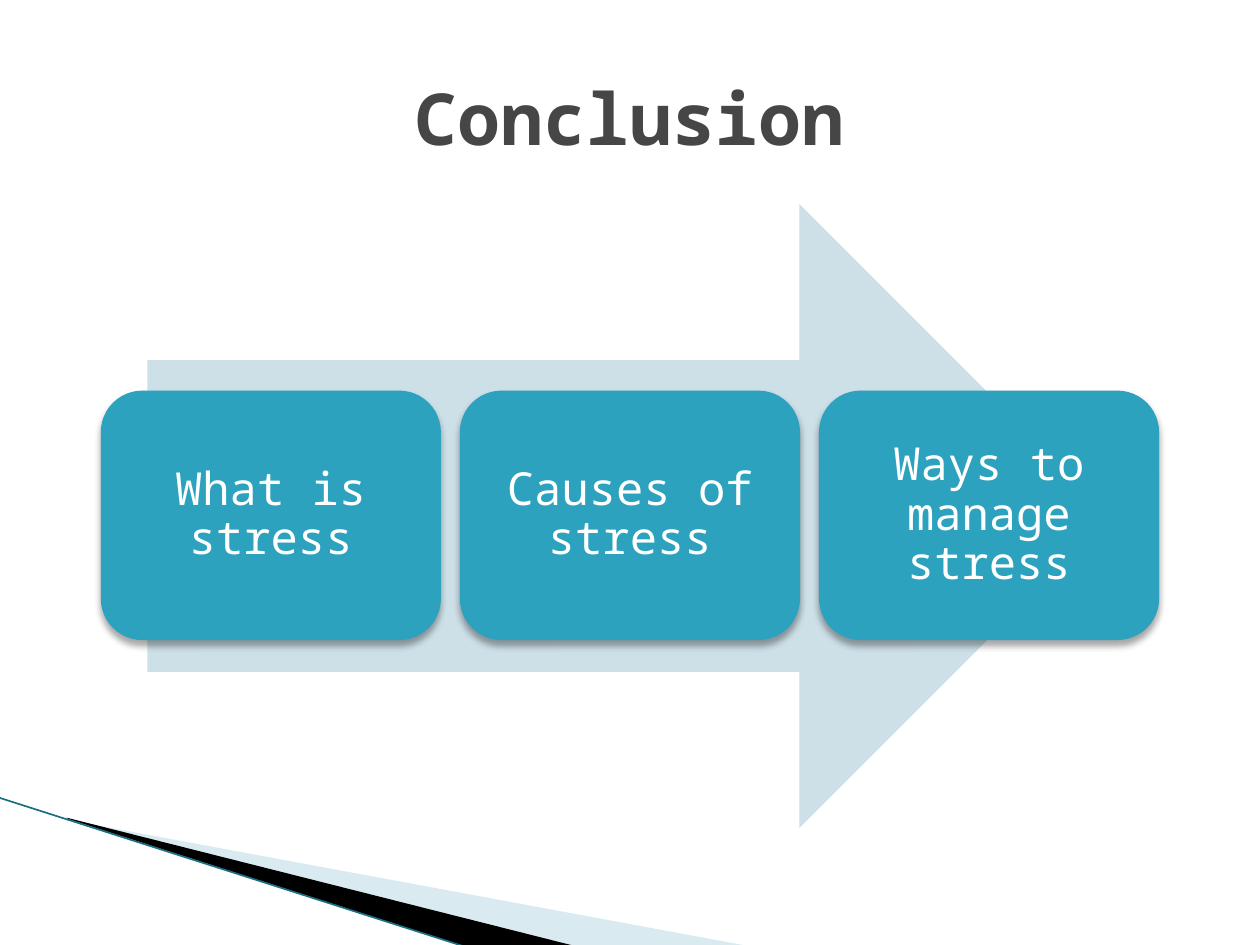
from lxml import etree
from pptx import Presentation
from pptx import util as u
from pptx.dml.color import RGBColor
from pptx.enum import shapes, text
from pptx.oxml import ns

FONT = "Noto Sans Mono"
COLORS = {
    "pale": "A0CBDC",
    "black": "000000",
    "edge": "1B6F82",
    "arrow": "CDE0E8",
    "step": "2DA2BF",
    "white": "FFFFFF",
    "title": "464646",
}
STEPS = ["What is stress", "Causes of stress", "Ways to manage stress"]


def rgb(name):
    return RGBColor.from_string(COLORS[name])


def paint(shape, color):
    """Solid fill, no outline, no shadow."""
    shape.fill.solid()
    shape.fill.fore_color.rgb = rgb(color)
    shape.line.fill.background()
    shape.shadow.inherit = False


def add_wedge(slide, points, color, alpha=None):
    start, *rest = [(u.Inches(x), u.Inches(y)) for x, y in points]
    builder = slide.shapes.build_freeform(*start)
    builder.add_line_segments(rest, close=True)
    wedge = builder.convert_to_shape()
    paint(wedge, color)
    if alpha is not None:
        tint = wedge.fill._xPr.find(".//" + ns.qn("a:srgbClr"))
        etree.SubElement(tint, ns.qn("a:alpha"), val=str(alpha * 1000))


def add_edge(slide, start, end):
    edge = slide.shapes.add_connector(
        shapes.MSO_CONNECTOR.STRAIGHT, *map(u.Inches, start + end))
    edge.line.color.rgb = rgb("edge")
    edge.line.width = u.Pt(0.95)
    etree.SubElement(edge._element.spPr, ns.qn("a:effectLst"))


def add_soft_shadow(shape):
    effects = shape._element.spPr.find(ns.qn("a:effectLst"))
    shadow = etree.SubElement(
        effects, ns.qn("a:outerShdw"), blurRad=str(u.Pt(4)),
        dist=str(u.Pt(3)), dir="5400000", algn="ctr", rotWithShape="0")
    tint = etree.SubElement(shadow, ns.qn("a:srgbClr"), val=COLORS["black"])
    etree.SubElement(tint, ns.qn("a:alpha"), val="35000")


def write(shape, words, size, color, bold=False):
    frame = shape.text_frame
    frame.word_wrap = True
    frame.vertical_anchor = text.MSO_ANCHOR.MIDDLE
    paragraph = frame.paragraphs[0]
    paragraph.text = words
    paragraph.alignment = text.PP_ALIGN.CENTER
    paragraph.font.name = FONT
    paragraph.font.size = u.Pt(size)
    paragraph.font.bold = bold
    paragraph.font.color.rgb = rgb(color)
    return frame


def add_block(slide, kind, box, color):
    block = slide.shapes.add_shape(kind, *map(u.Inches, box))
    paint(block, color)
    return block


def add_step(slide, left, words):
    step = add_block(slide, shapes.MSO_SHAPE.ROUNDED_RECTANGLE,
                     (left, 3.1, 2.7, 1.98), "step")
    add_soft_shadow(step)
    frame = write(step, words, 26, "white")
    frame.paragraphs[0].line_spacing = 0.9
    frame.margin_left = frame.margin_right = u.Inches(0.11)
    frame.margin_top = frame.margin_bottom = u.Inches(0.11)


def main():
    deck = Presentation()
    deck.slide_width, deck.slide_height = u.Inches(10), u.Inches(7.5)
    slide = deck.slides.add_slide(deck.slide_layouts[6])

    # Corner decoration
    add_wedge(slide, [(0.55, 6.51), (5.95, 7.51), (4.56, 7.51), (0.55, 6.5)],
              "pale", alpha=40)
    add_wedge(slide, [(0.53, 6.49), (4.57, 7.51), (3.72, 7.52), (0.54, 6.5)],
              "black")
    add_edge(slide, (-0.01, 6.33), (3.71, 7.52))

    # Arrow with the three steps
    add_block(slide, shapes.MSO_SHAPE.RIGHT_ARROW,
              (1.17, 1.62, 7.65, 4.95), "arrow")
    for index, words in enumerate(STEPS):
        add_step(slide, 0.8 + index * 2.85, words)

    # Title
    title = slide.shapes.add_textbox(*map(u.Inches, (0.5, 0.3, 9, 1.25)))
    write(title, "Conclusion", 41, "title", bold=True)

    deck.save("out.pptx")


if __name__ == "__main__":
    main()
